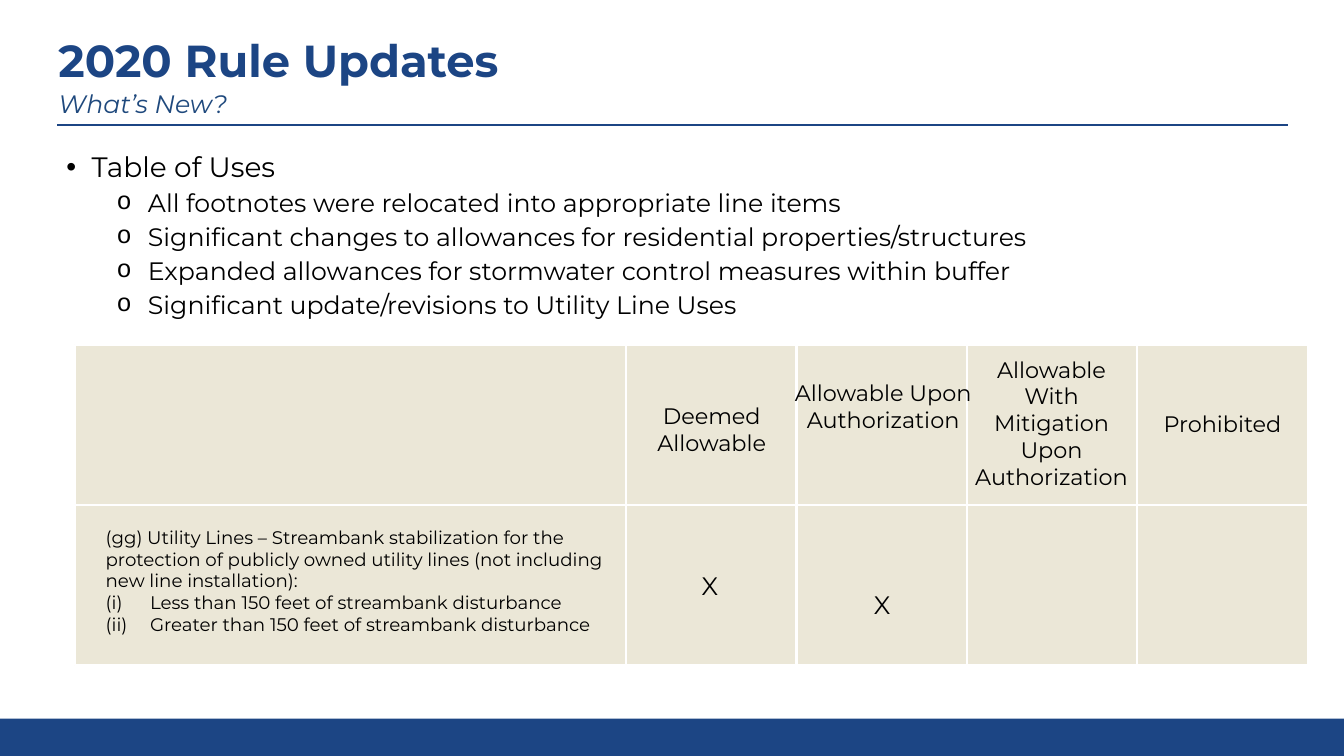
from lxml import etree
from pptx import Presentation
from pptx.dml.color import RGBColor
from pptx.enum.shapes import MSO_CONNECTOR, MSO_SHAPE
from pptx.enum.text import MSO_ANCHOR, PP_ALIGN
from pptx.oxml.ns import qn
from pptx.util import Inches, Pt

NAVY = RGBColor(0x1C, 0x45, 0x84)
SLATE_BLUE = RGBColor(0x1F, 0x49, 0x7D)
SAND = RGBColor(0xEB, 0xE7, 0xD7)
WHITE = RGBColor(0xFF, 0xFF, 0xFF)
BLACK = RGBColor(0, 0, 0)
FONT = "Montserrat"
LEFT, CENTER = PP_ALIGN.LEFT, PP_ALIGN.CENTER
TOP, MIDDLE = MSO_ANCHOR.TOP, MSO_ANCHOR.MIDDLE
RECTANGLE, STRAIGHT = MSO_SHAPE.RECTANGLE, MSO_CONNECTOR.STRAIGHT

USES = [
    "All footnotes were relocated into appropriate line items",
    "Significant changes to allowances for residential properties/structures",
    "Expanded allowances for stormwater control measures within buffer",
    "Significant update/revisions to Utility Line Uses",
]
# Header paragraphs with the box of each, relative to the grid
HEADERS = [
    (["Deemed Allowable"], (5.34, 0.52, 1.96, 0.94)),
    (["Allowable Upon Authorization"], (7.04, 0.29, 1.96, 1.21)),
    (["Allowable", "With", "Mitigation Upon Authorization"], (8.71, 0.06, 1.96, 1.75)),
    (["Prohibited"], (10.53, 0.6, 1.71, 0.37)),
]
MARK_PLACES = [(6.12, 2.19), (7.83, 2.38)]
UTILITY_LINES = ("(gg) Utility Lines – Streambank stabilization for the protection of "
                 "publicly owned utility lines (not including new line installation):")
DISTURBANCES = ["Less than 150 feet of streambank disturbance",
                "Greater than 150 feet of streambank disturbance"]
USE_WIDTH = 5.47
CATEGORY_WIDTH = 1.69
ROW_HEIGHT = 1.59


def style(para, size, color=BLACK, bold=False, italic=False):
    font = para.font
    font.name, font.size, font.bold, font.italic = FONT, Pt(size), bold, italic
    font.color.rgb = color


def add_bullet(para, tag, typeface, indent, hanging, **attributes):
    """Call before style(), so that the bullet precedes the font settings."""
    properties = para._p.get_or_add_pPr()
    properties.set("marL", str(Inches(indent)))
    properties.set("indent", str(-Inches(hanging)))
    etree.SubElement(properties, qn("a:buFont"), typeface=typeface)
    etree.SubElement(properties, qn(tag), **attributes)


def next_paragraph(frame, text):
    para = frame.paragraphs[0]
    if para.runs:
        para = frame.add_paragraph()
    para.add_run().text = text
    return para


def add_text_frame(page, box, anchor=TOP):
    frame = page.shapes.add_textbox(*map(Inches, box)).text_frame
    frame.word_wrap = True
    frame.vertical_anchor = anchor
    return frame


def add_rectangle(page, box, color):
    rectangle = page.shapes.add_shape(RECTANGLE, *map(Inches, box))
    rectangle.shadow.inherit = False
    rectangle.fill.solid()
    rectangle.fill.fore_color.rgb = color
    rectangle.line.fill.background()
    return rectangle


def add_heading(page, left, top):
    # Title and subtitle
    title = next_paragraph(add_text_frame(page, (left, top, 8.89, 0.61), MIDDLE),
                           "2020 Rule Updates")
    title.line_spacing = 0.9
    style(title, 32, NAVY, bold=True)
    subtitle = next_paragraph(add_text_frame(page, (left, top + 0.41, 7.05, 0.62), MIDDLE),
                              "What’s New?")
    subtitle.line_spacing = 0.9
    subtitle.space_before = Pt(10)
    style(subtitle, 18, SLATE_BLUE, italic=True)

    # Rule under the heading
    rule_left, rule_top = Inches(left + 0.09), Inches(top + 0.92)
    rule = page.shapes.add_connector(STRAIGHT, rule_left, rule_top,
                                     rule_left + Inches(12.2), rule_top)
    rule.line.color.rgb = NAVY
    rule.line.width = Pt(1.5)
    etree.SubElement(rule._element.spPr, qn("a:effectLst"))


def add_uses_list(page, box):
    frame = add_text_frame(page, box)
    for index, text in enumerate(["Table of Uses"] + USES):
        para = next_paragraph(frame, text)
        para.line_spacing = 0.9
        if index == 0:
            para.space_before = Pt(10)
            add_bullet(para, "a:buChar", "Arial", 0.25, 0.25, char="•")
            style(para, 20)
        else:
            para.level = 1
            para.space_before = Pt(5)
            add_bullet(para, "a:buChar", "Courier New", 0.81, 0.31, char="o")
            style(para, 18)


def add_grid_text(page, box, texts, size, alignment=CENTER):
    frame = add_text_frame(page, box)
    for text in texts:
        para = next_paragraph(frame, text)
        para.alignment = alignment
        style(para, size)


def add_description(page, box):
    frame = add_text_frame(page, box)
    for index, text in enumerate([UTILITY_LINES] + DISTURBANCES):
        para = next_paragraph(frame, text)
        para.line_spacing = Pt(15.6)
        if index:
            add_bullet(para, "a:buAutoNum", FONT, 0.44, 0.44, type="romanLcParenBoth")
        style(para, 13)


def add_allowance_grid(page, left, top):
    # Cells: a wide one for the use, then one for each category
    for row in range(2):
        cell_left, cell_top = left, top + row * ROW_HEIGHT
        for width in [USE_WIDTH] + [CATEGORY_WIDTH] * len(HEADERS):
            cell = add_rectangle(page, (cell_left, cell_top, width, ROW_HEIGHT), SAND)
            cell.line.color.rgb = WHITE
            cell.line.width = Pt(1.5)
            cell_left += width

    # Category headers
    for texts, (x, y, width, height) in HEADERS:
        add_grid_text(page, (left + x, top + y, width, height), texts, 16)

    # Utility line use and its marks
    add_description(page, (left + 0.21, top + 1.75, 5.17, 1.45))
    for x, y in MARK_PLACES:
        add_grid_text(page, (left + x, top + y, 0.63, 0.4), ["X"], 18, LEFT)


def main():
    deck = Presentation()
    deck.slide_width, deck.slide_height = Inches(13.33), Inches(7.5)
    page = deck.slides.add_slide(deck.slide_layouts[6])
    add_rectangle(page, (0, 7.13, 13.33, 0.37), NAVY)
    add_heading(page, 0.48, 0.32)
    add_uses_list(page, (0.56, 1.47, 11.5, 1.83))
    add_allowance_grid(page, 0.74, 3.42)
    deck.save("out.pptx")


if __name__ == "__main__":
    main()
